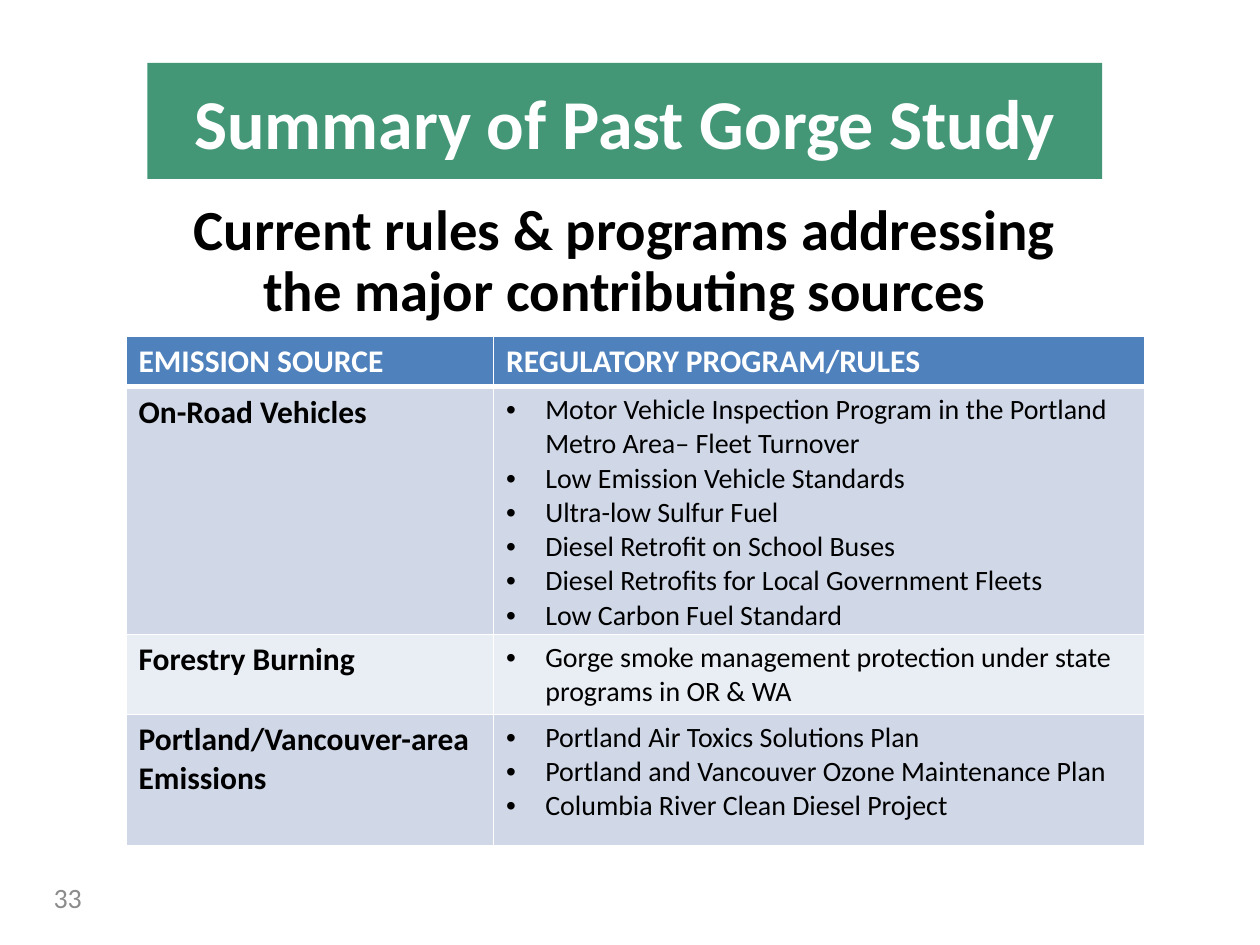
from dataclasses import dataclass

from lxml import etree
from pptx import Presentation
from pptx.dml.color import RGBColor
from pptx.enum import shapes, text
from pptx.oxml import ns
from pptx.util import Cm, Pt


@dataclass(frozen=True)
class Theme:
    font: str = "Calibri"
    banner: str = "439777"
    header: str = "4F81BD"
    bands: tuple = ("D0D8E8", "E9EDF4")
    light: str = "FFFFFF"
    dark: str = "000000"
    muted: str = "8C8C8C"
    banner_size: float = 40
    heading_size: float = 32.4
    label_size: float = 18
    body_size: float = 16


THEME = Theme()

HEADERS = ("EMISSION SOURCE", "REGULATORY PROGRAM/RULES")
SOURCES = (
    ("On-Road Vehicles", (
        "Motor Vehicle Inspection Program in the Portland Metro Area– Fleet Turnover",
        "Low Emission Vehicle Standards",
        "Ultra-low Sulfur Fuel",
        "Diesel Retrofit on School Buses",
        "Diesel Retrofits for Local Government Fleets",
        "Low Carbon Fuel Standard",
    )),
    ("Forestry Burning", (
        "Gorge smoke management protection under state programs in OR & WA",
    )),
    ("Portland/Vancouver-area Emissions", (
        "Portland Air Toxics Solutions Plan",
        "Portland and Vancouver Ozone Maintenance Plan",
        "Columbia River Clean Diesel Project",
    )),
)
COLUMN_WIDTHS = (7.41, 13.12)
ROW_HEIGHTS = (0.99, 4.93, 1.57, 2.64)


def add_span(para, words, size, color, bold=False):
    span = para.add_run()
    span.text = words
    span.font.name = THEME.font
    span.font.size = Pt(size)
    span.font.bold = bold
    span.font.color.rgb = RGBColor.from_string(color)


def add_bullet(para):
    props = para._p.get_or_add_pPr()
    props.set("marL", str(Cm(0.79)))
    props.set("indent", str(-Cm(0.79)))
    etree.SubElement(props, ns.qn("a:buFont"), typeface="Arial")
    etree.SubElement(props, ns.qn("a:buChar"), char="•")


def style_cell(cell, fill, bottom=1):
    """Give a cell its white borders and then its fill."""
    props = cell._tc.get_or_add_tcPr()
    for side, width in (("L", 1), ("R", 1), ("T", 1), ("B", bottom)):
        line = etree.SubElement(props, ns.qn(f"a:ln{side}"), w=str(Pt(width)))
        solid = etree.SubElement(line, ns.qn("a:solidFill"))
        etree.SubElement(solid, ns.qn("a:srgbClr"), val=THEME.light)
    cell.fill.solid()
    cell.fill.fore_color.rgb = RGBColor.from_string(fill)


def add_banner(page, left, top, width, height):
    box = page.shapes.add_shape(shapes.MSO_SHAPE.RECTANGLE,
                                Cm(left), Cm(top), Cm(width), Cm(height))
    box.shadow.inherit = False
    box.fill.solid()
    box.fill.fore_color.rgb = RGBColor.from_string(THEME.banner)
    box.line.fill.background()
    frame = box.text_frame
    frame.vertical_anchor = text.MSO_ANCHOR.MIDDLE
    para = frame.paragraphs[0]
    para.alignment = text.PP_ALIGN.CENTER
    add_span(para, "Summary of Past Gorge Study", THEME.banner_size, THEME.light, True)


def add_label(page, left, top, width, height, align):
    """Add an empty, vertically centred text box and return its paragraph."""
    box = page.shapes.add_textbox(Cm(left), Cm(top), Cm(width), Cm(height))
    frame = box.text_frame
    frame.word_wrap = True
    frame.vertical_anchor = text.MSO_ANCHOR.MIDDLE
    para = frame.paragraphs[0]
    para.alignment = align
    return para


def add_heading(page, left, top, width, height):
    para = add_label(page, left, top, width, height, text.PP_ALIGN.CENTER)
    para.line_spacing = 0.9
    add_span(para, "Current rules & programs addressing the major contributing sources",
             THEME.heading_size, THEME.dark, True)


def add_page_number(page, left, top, width, height):
    para = add_label(page, left, top, width, height, text.PP_ALIGN.RIGHT)
    add_span(para, "33", THEME.body_size, THEME.muted)


def add_rules_table(page, left, top):
    frame = page.shapes.add_table(len(ROW_HEIGHTS), len(COLUMN_WIDTHS), Cm(left), Cm(top),
                                  Cm(sum(COLUMN_WIDTHS)), Cm(sum(ROW_HEIGHTS)))
    table = frame.table
    for column, width in zip(table.columns, COLUMN_WIDTHS):
        column.width = Cm(width)
    for row, height in zip(table.rows, ROW_HEIGHTS):
        row.height = Cm(height)

    # Header row
    for index, header in enumerate(HEADERS):
        cell = table.cell(0, index)
        style_cell(cell, THEME.header, bottom=3)
        add_span(cell.text_frame.paragraphs[0], header, THEME.label_size, THEME.light, True)

    # One banded row for each emission source
    for row, (source, rules) in enumerate(SOURCES, start=1):
        label, body = table.cell(row, 0), table.cell(row, 1)
        for cell in (label, body):
            style_cell(cell, THEME.bands[(row - 1) % 2])
        add_span(label.text_frame.paragraphs[0], source, THEME.label_size, THEME.dark, True)
        for index, rule in enumerate(rules):
            lines = body.text_frame
            para = lines.add_paragraph() if index else lines.paragraphs[0]
            add_bullet(para)
            add_span(para, rule, THEME.body_size, THEME.dark)


def main():
    deck = Presentation()
    deck.slide_width, deck.slide_height = Cm(25.4), Cm(19.05)
    page = deck.slides.add_slide(deck.slide_layouts[6])
    add_heading(page, 3.38, 4.24, 18.42, 2.11)
    add_page_number(page, 0.2, 17.58, 1.7, 1.02)
    add_rules_table(page, 2.54, 6.78)
    add_banner(page, 2.97, 1.27, 19.25, 2.34)
    deck.save("out.pptx")


if __name__ == "__main__":
    main()
